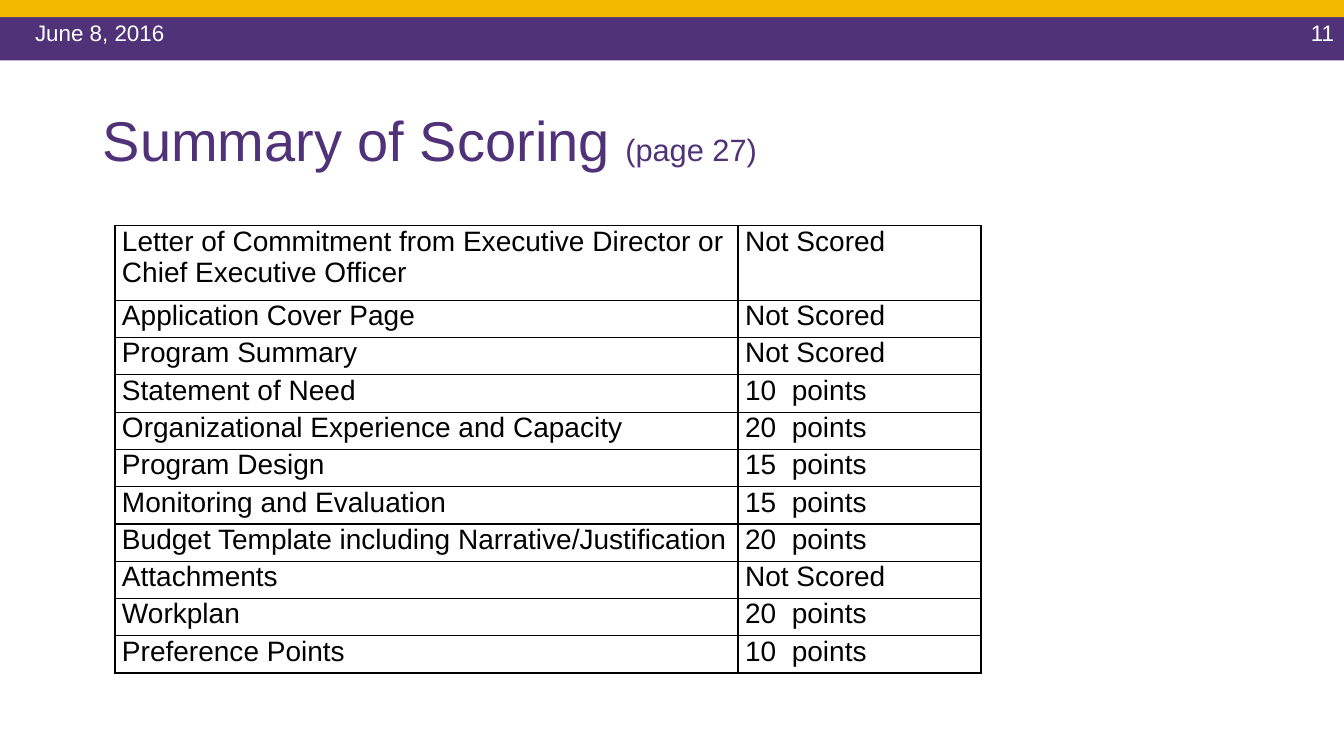
from dataclasses import dataclass

from lxml import etree
from pptx import Presentation
from pptx.dml.color import RGBColor
from pptx.enum.shapes import MSO_SHAPE
from pptx.enum.text import MSO_ANCHOR, MSO_AUTO_SIZE, PP_ALIGN
from pptx.oxml.ns import qn
from pptx.util import Inches, Pt


@dataclass(frozen=True)
class Theme:
    font: str = "Arial"
    purple: str = "503278"
    gold: str = "F2B800"
    white: str = "FFFFFF"
    black: str = "000000"
    title_size: int = 40
    note_size: int = 22
    table_size: int = 20
    header_size: int = 16


THEME = Theme()
SLIDE_W = 13.33
GOLD_H, PURPLE_H = 0.17, 0.43
COLUMN_WIDTHS = (6.18, 2.41)
ROW_H = 0.37
SCORES = [
    ("Letter of Commitment from Executive Director or Chief Executive Officer", "Not Scored"),
    ("Application Cover Page", "Not Scored"),
    ("Program Summary", "Not Scored"),
    ("Statement of Need", "10  points"),
    ("Organizational Experience and Capacity", "20  points"),
    ("Program Design", "15  points"),
    ("Monitoring and Evaluation", "15  points"),
    ("Budget Template including Narrative/Justification", "20  points"),
    ("Attachments", "Not Scored"),
    ("Workplan", "20  points"),
    ("Preference Points", "10  points"),
]


def add_text(p, text, *, size, color, align=PP_ALIGN.LEFT, spacing=None):
    p.alignment = align
    if spacing:
        p.line_spacing = spacing
    r = p.add_run()
    r.text = text
    r.font.name = THEME.font
    r.font.size = Pt(size)
    r.font.color.rgb = RGBColor.from_string(color)


def add_band(slide, top, height, color):
    sp = slide.shapes.add_shape(
        MSO_SHAPE.RECTANGLE, 0, Inches(top), Inches(SLIDE_W), Inches(height))
    sp.shadow.inherit = False
    sp.fill.solid()
    sp.fill.fore_color.rgb = RGBColor.from_string(color)
    sp.line.fill.background()


def add_header_text(slide, text, left, width, align):
    sp = slide.shapes.add_textbox(
        Inches(left), Inches(GOLD_H), Inches(width), Inches(PURPLE_H))
    tf = sp.text_frame
    tf.word_wrap = True
    add_text(tf.paragraphs[0], text, size=THEME.header_size, color=THEME.white,
             align=align, spacing=0.9)


def set_title(slide, text, note):
    sp = slide.shapes.title
    sp.left, sp.top = Inches(0.92), Inches(0.85)
    sp.width, sp.height = Inches(11.5), Inches(1.15)
    tf = sp.text_frame
    tf.auto_size = MSO_AUTO_SIZE.NONE
    tf.vertical_anchor = MSO_ANCHOR.MIDDLE
    p = tf.paragraphs[0]
    add_text(p, text, size=THEME.title_size, color=THEME.purple, spacing=0.9)
    add_text(p, note, size=THEME.note_size, color=THEME.purple, spacing=0.9)


def set_borders(cell):
    props = cell._tc.get_or_add_tcPr()
    for position, side in enumerate(("a:lnL", "a:lnR", "a:lnT", "a:lnB")):
        ln = etree.Element(qn(side), w=str(Pt(1)))
        fill = etree.SubElement(ln, qn("a:solidFill"))
        etree.SubElement(fill, qn("a:srgbClr"), val=THEME.black)
        props.insert(position, ln)  # borders come before the fill


def fill_cell(cell, text):
    cell.margin_left = cell.margin_right = Inches(0.07)
    cell.margin_top = cell.margin_bottom = 0
    cell.vertical_anchor = MSO_ANCHOR.TOP
    cell.fill.background()
    set_borders(cell)
    add_text(cell.text_frame.paragraphs[0], text,
             size=THEME.table_size, color=THEME.black)


def add_score_table(slide):
    heights = [2 * ROW_H] + [ROW_H] * (len(SCORES) - 1)
    table = slide.shapes.add_table(
        len(SCORES), len(COLUMN_WIDTHS), Inches(1.14), Inches(2.24),
        Inches(sum(COLUMN_WIDTHS)), Inches(sum(heights))).table
    table.first_row = table.horz_banding = False
    for column, width in zip(table.columns, COLUMN_WIDTHS):
        column.width = Inches(width)
    for row, height, texts in zip(table.rows, heights, SCORES):
        row.height = Inches(height)
        for cell, text in zip(row.cells, texts):
            fill_cell(cell, text)


def main():
    prs = Presentation()
    prs.slide_width, prs.slide_height = Inches(SLIDE_W), Inches(7.5)
    slide = prs.slides.add_slide(prs.slide_layouts[5])

    # Header bands with date and slide number
    add_band(slide, GOLD_H, PURPLE_H, THEME.purple)
    add_band(slide, 0, GOLD_H, THEME.gold)
    add_header_text(slide, "June 8, 2016", 0.25, 4.16, PP_ALIGN.LEFT)
    add_header_text(slide, "11", 9.92, 3.41, PP_ALIGN.RIGHT)

    # Title and scoring table
    set_title(slide, "Summary of Scoring ", "(page 27)")
    add_score_table(slide)

    prs.save("out.pptx")


if __name__ == "__main__":
    main()
